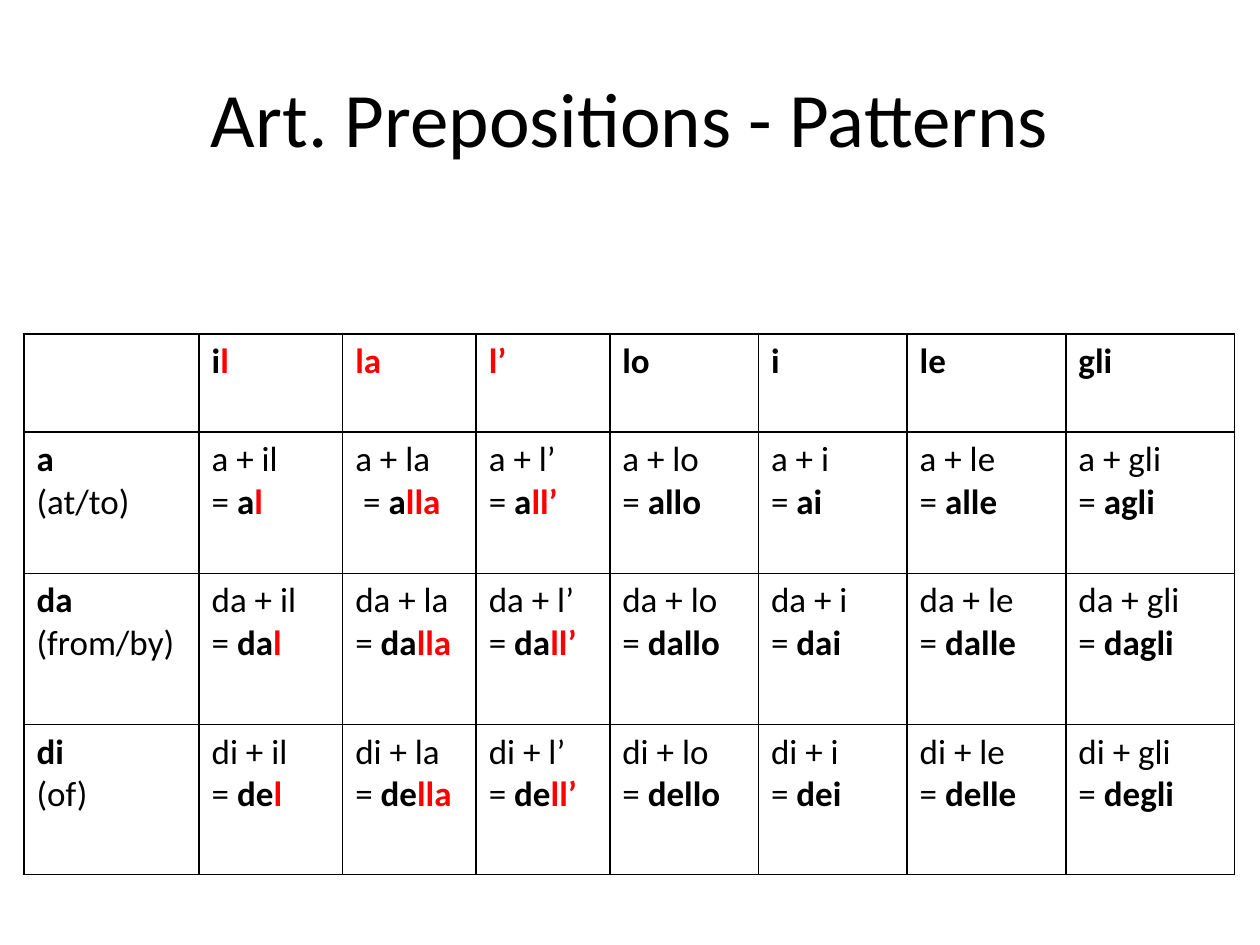
from dataclasses import dataclass

from lxml import etree
from pptx import Presentation
from pptx import util as u
from pptx.dml.color import RGBColor
from pptx.enum import text
from pptx.oxml.ns import qn

PX = 9144  # EMU per px, 100 px to the inch


@dataclass(frozen=True)
class Theme:
    font: str = "Calibri"
    title_size: int = 44
    cell_size: int = 20
    border_width: int = 1
    ink: str = "000000"
    accent: str = "FF0000"


THEME = Theme()
TITLE_BOX = (50, 30, 900, 125)
TABLE_BOX = (19, 265, 961, 429)
COLUMN_WIDTHS = (139, 114, 106, 106, 118, 118, 126, 134)
ROW_HEIGHTS = (78, 112, 120, 119)

# preposition, meaning, stem it takes before an article
PREPOSITIONS = [("a", "(at/to)", "a"), ("da", "(from/by)", "da"), ("di", "(of)", "de")]
# article split into plain and accented part, then ending split the same way
ARTICLES = [
    (("i", "l"), ("", "l")),
    (("", "la"), ("", "lla")),
    (("", "l’"), ("", "ll’")),
    (("lo", ""), ("llo", "")),
    (("i", ""), ("i", "")),
    (("le", ""), ("lle", "")),
    (("gli", ""), ("gli", "")),
]


def emu(*lengths):
    return [u.Emu(length * PX) for length in lengths]


def style_run(run, size, color, bold=False):
    font = run.font
    font.name = THEME.font
    font.size = u.Pt(size)
    font.bold = bold
    font.color.rgb = RGBColor.from_string(color)


def add_title(slide, box):
    title = slide.shapes.title
    title.left, title.top, title.width, title.height = emu(*box)
    frame = title.text_frame
    frame.text = "Art. Prepositions - Patterns"
    frame.vertical_anchor = text.MSO_ANCHOR.MIDDLE
    paragraph = frame.paragraphs[0]
    paragraph.alignment = text.PP_ALIGN.CENTER
    style_run(paragraph.runs[0], THEME.title_size, THEME.ink)


def plain(words):
    return words, False, THEME.ink


def strong(words, accented=""):
    return [(words, True, THEME.ink), (accented, True, THEME.accent)]


def pattern_rows():
    """Each cell is a list of lines, each line a list of (words, bold, color)."""
    rows = [[[]] + [[strong(*article)] for article, _ in ARTICLES]]
    for preposition, meaning, stem in PREPOSITIONS:
        row = [[strong(preposition), [plain(meaning)]]]
        for article, (ending, accented) in ARTICLES:
            name = "".join(article)
            equals = " = " if (preposition, name) == ("a", "la") else "= "
            row.append([
                [plain(f"{preposition} + {name}")],
                [plain(equals), *strong(stem + ending, accented)],
            ])
        rows.append(row)
    return rows


def fill_cell(cell, lines):
    frame = cell.text_frame
    for index, line in enumerate(lines):
        paragraph = frame.add_paragraph() if index else frame.paragraphs[0]
        for words, bold, color in line:
            if words:
                run = paragraph.add_run()
                run.text = words
                style_run(run, THEME.cell_size, color, bold)


def outline_cell(cell):
    properties = cell._tc.get_or_add_tcPr()
    for index, side in enumerate(("lnL", "lnR", "lnT", "lnB")):
        line = etree.Element(qn(f"a:{side}"), w=str(u.Pt(THEME.border_width)))
        fill = etree.SubElement(line, qn("a:solidFill"))
        etree.SubElement(fill, qn("a:srgbClr"), val=THEME.ink)
        properties.insert(index, line)


def add_pattern_table(slide, box):
    rows = pattern_rows()
    table = slide.shapes.add_table(len(rows), len(rows[0]), *emu(*box)).table
    table.first_row = table.horz_banding = False
    for column, width in zip(table.columns, emu(*COLUMN_WIDTHS)):
        column.width = width
    for row, height, contents in zip(table.rows, emu(*ROW_HEIGHTS), rows):
        row.height = height
        for cell, lines in zip(row.cells, contents):
            cell.fill.background()
            outline_cell(cell)
            fill_cell(cell, lines)


def main():
    presentation = Presentation()
    presentation.slide_width, presentation.slide_height = emu(1000, 750)
    slide = presentation.slides.add_slide(presentation.slide_layouts[5])
    add_title(slide, TITLE_BOX)
    add_pattern_table(slide, TABLE_BOX)
    presentation.save("out.pptx")


if __name__ == "__main__":
    main()
